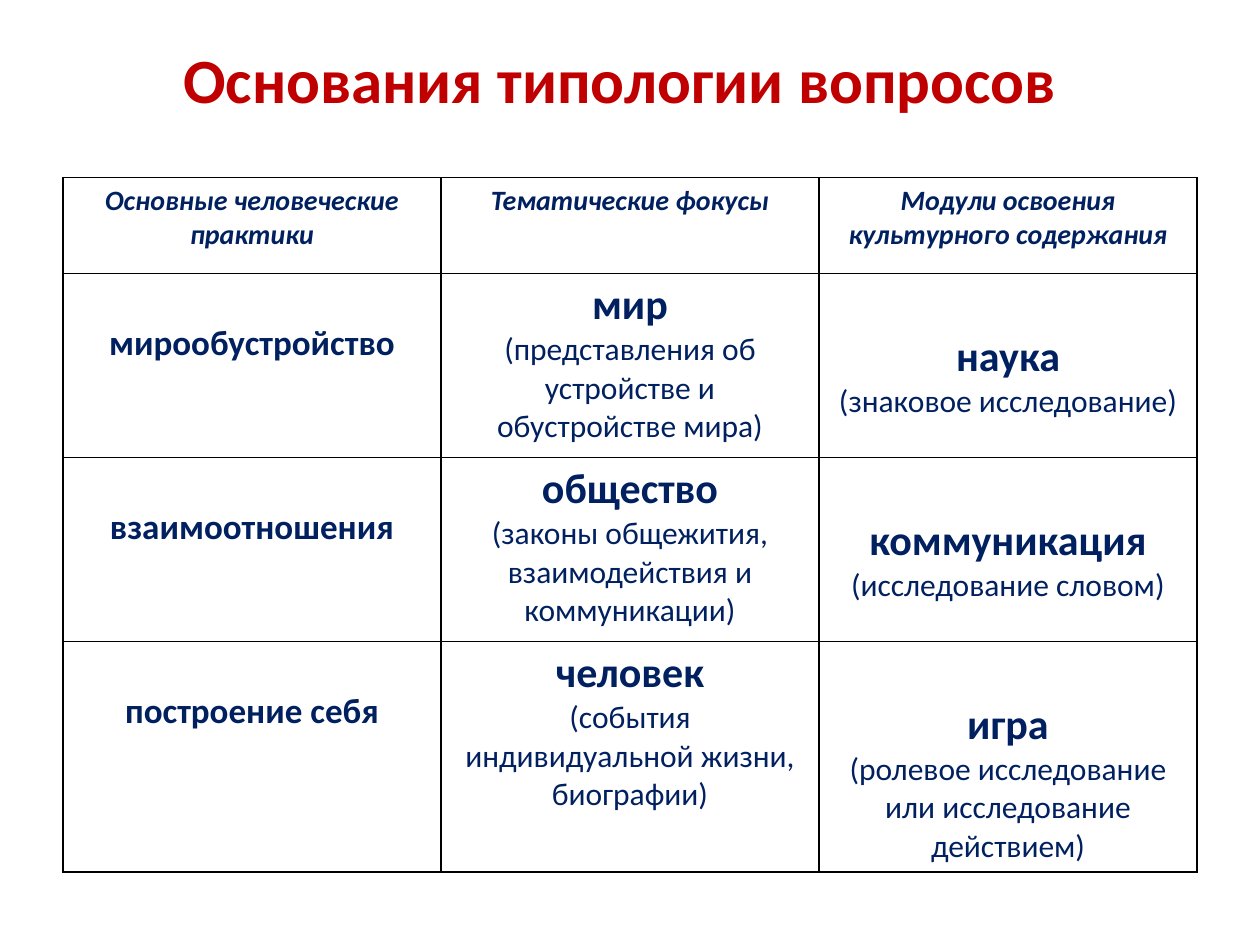
"""Build a slide with a titled table on the grounds for a typology of questions."""
import lxml.etree
import pptx
import pptx.dml.color
import pptx.enum.text
import pptx.oxml.ns
import pptx.util

NAVY, RED, BLACK = "002060", "C00000", "000000"
INCH = pptx.util.Inches
HEAD, TERM, NOTE = (16, True, True), (24, True, False), (18, False, False)
NAME = (20, True, False)
ROWS = [0.76, 1.46, 1.46, 1.83]
COL = 3
TEXT = [
    ["Основные человеческие практики", "Тематические фокусы",
     "Модули освоения культурного содержания"],
    ["мирообустройство",
     "мир|(представления об устройстве и обустройстве мира)",
     "наука|(знаковое исследование)"],
    ["взаимоотношения",
     "общество|(законы общежития, взаимодействия и коммуникации)",
     "коммуникация|(исследование словом)"],
    ["построение себя",
     "человек|(события индивидуальной жизни, биографии)",
     "игра|(ролевое исследование или исследование действием)"],
]
TOPS = [0.39, 0.05, 0.46]


def write(frame, lines, looks, tint):
    """Fill a text frame with centred lines, one look for each."""
    frame.word_wrap = True
    for i, (line, look) in enumerate(zip(lines, looks)):
        par = frame.paragraphs[0] if i == 0 else frame.add_paragraph()
        par.text = line
        par.alignment = pptx.enum.text.PP_ALIGN.CENTER
        font = par.font
        font.name = "Calibri"
        font.size = pptx.util.Pt(look[0])
        font.bold, font.italic = look[1:]
        font.color.rgb = pptx.dml.color.RGBColor.from_string(tint)


def edge(cell):
    """Draw a thin black line on all four sides of a cell."""
    props = cell._tc.get_or_add_tcPr()
    tag = pptx.oxml.ns.qn
    for i, side in enumerate(("a:lnL", "a:lnR", "a:lnT", "a:lnB")):
        line = lxml.etree.Element(tag(side), w=str(pptx.util.Pt(1)))
        fill = lxml.etree.SubElement(line, tag("a:solidFill"))
        lxml.etree.SubElement(fill, tag("a:srgbClr"), val=BLACK)
        props.insert(i, line)


deck = pptx.Presentation()
deck.slide_width, deck.slide_height = INCH(10), INCH(7.5)
slide = deck.slides.add_slide(deck.slide_layouts[6])

grid = slide.shapes.add_table(
    len(ROWS), COL, INCH(0.5), INCH(1.41), INCH(3 * COL), INCH(sum(ROWS))).table
for col in grid.columns:
    col.width = INCH(3)
for r, (high, row) in enumerate(zip(ROWS, TEXT)):
    grid.rows[r].height = INCH(high)
    for c, text in enumerate(row):
        cell = grid.cell(r, c)
        cell.fill.background()
        edge(cell)
        if r == 0:
            looks = [HEAD]
        else:
            looks = [NAME] if c == 0 else [TERM, NOTE]
            cell.margin_top = INCH(TOPS[c])
        write(cell.text_frame, text.split("|"), looks, NAVY)

title = slide.shapes.add_textbox(INCH(0.42), 0, INCH(9), INCH(1.25)).text_frame
title.vertical_anchor = pptx.enum.text.MSO_ANCHOR.MIDDLE
write(title, ["Основания типологии вопросов"], [(36, True, False)], RED)

deck.save("out.pptx")
